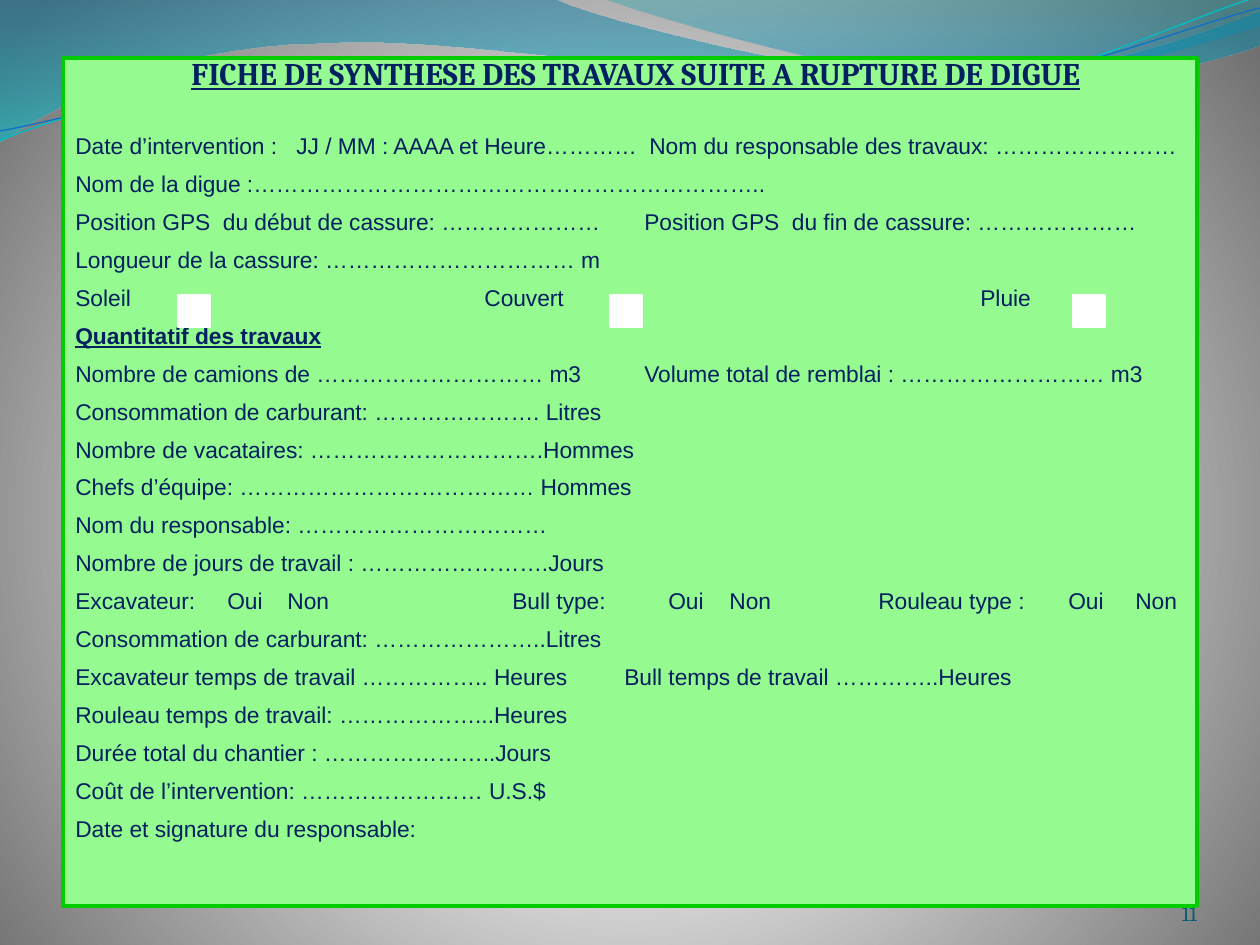
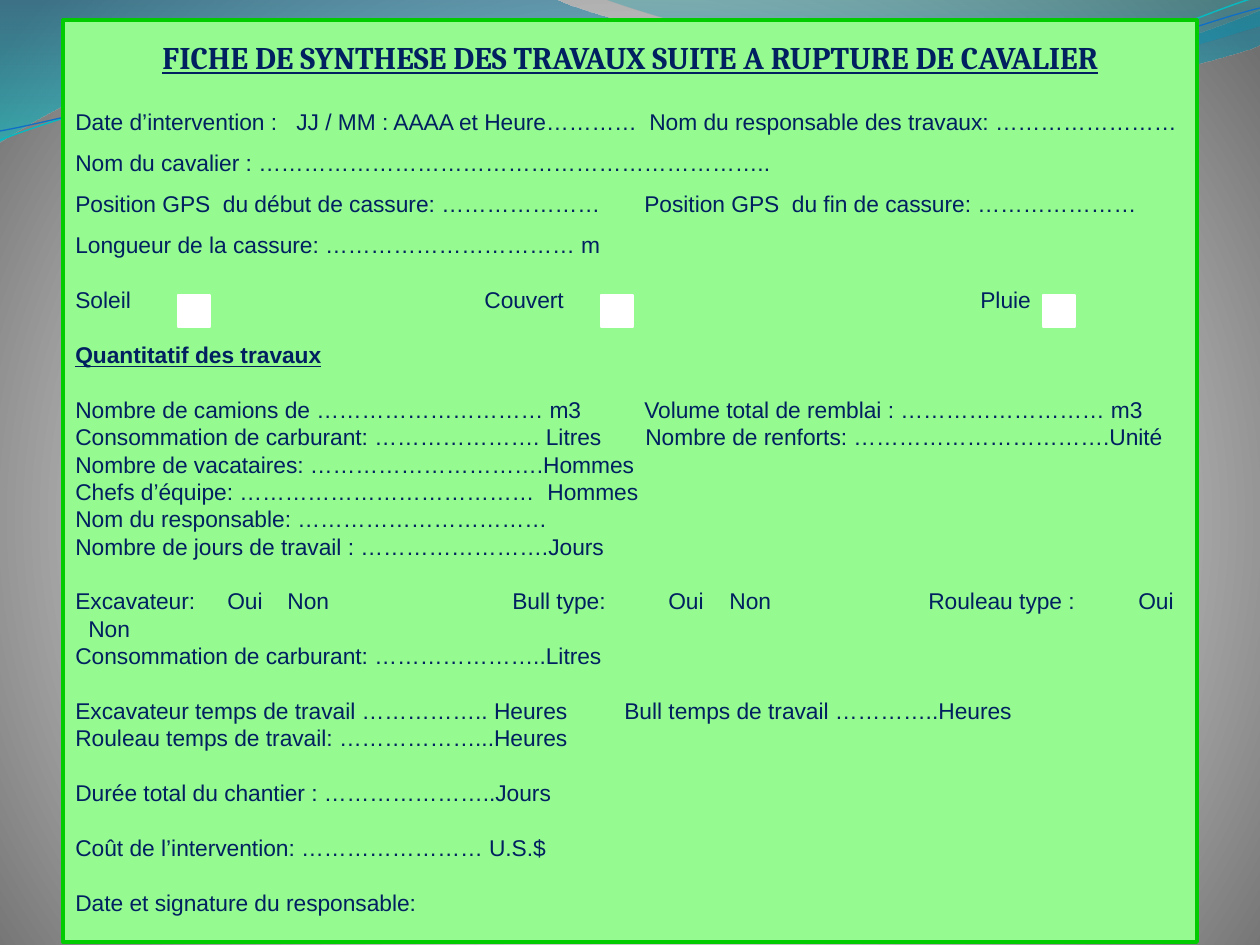
from lxml import etree
from pptx import Presentation
from pptx import util as u
from pptx.dml import color
from pptx.enum import shapes, text
from pptx.oxml import ns

W, H = 1260, 945
LEFT = 75  # where the form text starts
LINE = 15.65  # line pitch of the form, in points
HUES = {
    "navy": "002060", "page": "045D75", "form": "95FA90", "edge": "00CC00",
    "white": "FFFFFF", "grey": "707070", "cyan": "0AB8BF", "blue": "0F6FC6",
    "deep": "0074A1", "aqua": "00C6CF", "teal": "00A1A9", "sky": "008BBF",
}

# Decor: a start point, then lines (2 numbers) and curves (6 numbers)
WAVES = [
    ([(0, 0), (554, -1), (600, 21, 837, 79, 955, 79),
      (1074, 79, 1207, 33, 1260, 11), (1261, 45),
      (1239, 55, 1096, 96, 940, 95), (784, 95, 481, 35, 324, 43),
      (163, 45, 58, 105, -1, 142)],
     [(0, "deep", 45), (100, "aqua", 55)]),
    ([(604, -1), (641, 14, 859, 78, 969, 82),
      (1079, 86, 1211, 40, 1260, 26), (1260, 0)],
     [(0, "teal", 30), (80, "sky", 45)]),
]
CURVES = [
    ([(0, 140), (60, 117, 199, 72, 349, 66), (498, 59, 747, 112, 898, 101),
      (1050, 89, 1182, 19, 1257, -3)], "cyan", 0.85),
    ([(0, 131), (59, 121, 207, 77, 357, 71), (508, 64, 752, 106, 903, 95),
      (1053, 84, 1186, 26, 1260, 8)], "blue", 0.75),
]

# Form rows: key, text, tab stops
ROWS = [
    ("date", "Date d’intervention :\tJJ / MM : AAAA et Heure…………\t"
     "Nom du responsable des travaux: ……………………", (296, 649)),
    ("name", "Nom de la digue :…………………………………………………………..", ()),
    ("gps", "Position GPS  du début de cassure: …………………\t"
     "Position GPS  du fin de cassure: …………………", (644,)),
    ("length", "Longueur de la cassure: …………………………… m", ()),
    ("sky", "Soleil\tCouvert\tPluie", (484, 980)),
    ("head", "Quantitatif des travaux", ()),
    ("trucks", "Nombre de camions de ………………………… m3\t"
     "Volume total de remblai : ……………………… m3", (644,)),
    ("fuel", "Consommation de carburant: …………………. Litres", ()),
    ("crew", "Nombre de vacataires: ………………………….Hommes", ()),
    ("chiefs", "Chefs d’équipe: ………………………………… Hommes", ()),
    ("boss", "Nom du responsable: ……………………………", ()),
    ("days", "Nombre de jours de travail : …………………….Jours", ()),
    ("plant", "Excavateur:\tOui\tNon\tBull type:\tOui\tNon\tRouleau type :\tOui\tNon",
     (227, 287, 512, 668, 729, 878, 1068, 1135)),
    ("diesel", "Consommation de carburant: …………………..Litres", ()),
    ("hours", "Excavateur temps de travail …………….. Heures\t"
     "Bull temps de travail …………..Heures", (624,)),
    ("roller", "Rouleau temps de travail: ………………...Heures", ()),
    ("total", "Durée total du chantier : …………………..Jours", ()),
    ("cost", "Coût de l’intervention: …………………… U.S.$", ()),
    ("sign", "Date et signature du responsable:", ()),
]
# Rows that differ for the second form
RIDGE = {
    "name": ("Nom du cavalier : …………………………………………………………..", ()),
    "fuel": ("Consommation de carburant: …………………. Litres\t"
             "Nombre de renforts: …………………………….Unité", (645,)),
    "chiefs": ("Chefs d’équipe: …………………………………\tHommes", (547,)),
    "plant": ("Excavateur:\tOui\tNon\tBull type:\tOui\tNon\tRouleau type :\tOui\n\tNon",
              (88, 227, 287, 512, 668, 729, 928, 1138)),
}
# Space before each row, in points
EVEN = [0] + [6] * 18
LOOSE = ([0] + [LINE / 2] * 3 + [LINE] * 3 + [0] * 5
         + [LINE, 0, LINE, 0] + [LINE] * 3)


def px(n):
    return round(n * 914400 / 126)


def rgb(name):
    return color.RGBColor.from_string(HUES[name])


def shade(node, stops, tail):
    """Swap the solid fill of a node for a gradient."""
    marks = "".join(
        f'<a:gs pos="{pos * 1000}"><a:srgbClr val="{HUES[hue]}">'
        f'<a:alpha val="{alpha * 1000}"/></a:srgbClr></a:gs>'
        for pos, hue, alpha in stops)
    grad = etree.fromstring(
        f'<a:gradFill {ns.nsdecls("a")} rotWithShape="1">'
        f'<a:gsLst>{marks}</a:gsLst>{tail}</a:gradFill>')
    node.replace(node.find(ns.qn("a:solidFill")), grad)


def outline(slide, route, close):
    """Freeform through the end points, with its curved parts bent."""
    (x, y), *parts = route
    pen = slide.shapes.build_freeform(px(x), px(y))
    pen.add_line_segments([(px(p[-2]), px(p[-1])) for p in parts], close)
    shape = pen.convert_to_shape()
    shape.shadow.inherit = False
    edges = list(shape.element.iter(ns.qn("a:lnTo")))
    for edge, part in zip(edges, parts):
        if len(part) == 6:
            bend = etree.Element(ns.qn("a:cubicBezTo"))
            for a, b in zip(part[::2], part[1::2]):
                etree.SubElement(bend, ns.qn("a:pt"), x=str(px(a) - shape.left),
                                 y=str(px(b) - shape.top))
            edge.getparent().replace(edge, bend)
    return shape


def scene(slide):
    """Background, waves and curved lines."""
    slide.background.fill.solid()
    slide.background.fill.fore_color.rgb = rgb("white")
    back = slide.element.find(".//" + ns.qn("p:bgPr"))
    shade(back, [(0, "white", 100), (25, "white", 100), (100, "grey", 100)],
          '<a:path path="circle"><a:fillToRect l="10000" t="110000" '
          'r="10000" b="100000"/></a:path>')
    for route, stops in WAVES:
        wave = outline(slide, route, True)
        wave.fill.solid()
        wave.line.fill.background()
        shade(wave.element.spPr, stops, '<a:lin ang="5400000" scaled="0"/>')
    for route, hue, width in CURVES:
        curve = outline(slide, route, False)
        curve.fill.background()
        curve.line.color.rgb = rgb(hue)
        curve.line.width = u.Pt(width)


def rect(slide, x, y, w, h, fill, edge, width):
    shape = slide.shapes.add_shape(
        shapes.MSO_SHAPE.RECTANGLE, px(x), px(y), px(w), px(h))
    shape.shadow.inherit = False
    shape.fill.solid()
    shape.fill.fore_color.rgb = rgb(fill)
    shape.line.color.rgb = rgb(edge)
    shape.line.width = u.Pt(width)
    return shape


def write(para, words, size=13, font="Arial", hue="navy", strong=False,
          align="LEFT", gap=0, pitch=None, stops=()):
    """Put formatted text, with its tab stops, into a paragraph."""
    para.alignment = getattr(text.PP_ALIGN, align)
    para.space_before = u.Pt(gap)
    if pitch:
        para.line_spacing = u.Pt(pitch)
    if stops:
        tabs = etree.SubElement(para._p.get_or_add_pPr(), ns.qn("a:tabLst"))
        for x in stops:
            etree.SubElement(tabs, ns.qn("a:tab"), pos=str(px(x - LEFT)), algn="l")
    for i, piece in enumerate(words.split("\n")):
        if i:
            para.add_line_break()
        run = para.add_run()
        run.text = piece
        run.font.size = u.Pt(size)
        run.font.name = font
        run.font.bold = run.font.underline = strong
        run.font.color.rgb = rgb(hue)


def label(slide, x, y, w, h, words, **look):
    frame = slide.shapes.add_textbox(px(x), px(y), px(w), px(h)).text_frame
    frame.word_wrap = True
    write(frame.paragraphs[0], words, font="Cambria", **look)
    return frame


def number(slide, words):
    frame = label(slide, 1092, 876, 105, 50, words, size=12, hue="page", align="RIGHT")
    frame.margin_left = frame.margin_right = 0
    frame.margin_top = frame.margin_bottom = 0
    frame.vertical_anchor = text.MSO_ANCHOR.BOTTOM


def form(slide, top, height, inset, gaps, swaps):
    """Green sheet with one paragraph per row."""
    frame = rect(slide, 63, top, 1134, height, "form", "edge", 2.25).text_frame
    frame.word_wrap = True
    frame.vertical_anchor = text.MSO_ANCHOR.TOP
    frame.margin_top = px(inset)
    for i, (key, words, stops) in enumerate(ROWS):
        words, stops = swaps.get(key, (words, stops))
        para = frame.add_paragraph() if i else frame.paragraphs[0]
        write(para, words, strong=key == "head", gap=gaps[i], pitch=LINE, stops=stops)


def title(slide, x, y, w, words):
    label(slide, x, y, w, 50, words, size=18, strong=True, align="CENTER")


def boxes(slide, spots):
    for x in spots:
        rect(slide, x, 295, 32, 32, "white", "white", 0.75)


def main():
    deck = Presentation()
    deck.slide_width, deck.slide_height = px(W), px(H)
    dike, ridge = (deck.slides.add_slide(deck.slide_layouts[6]) for _ in range(2))

    # Dike form
    scene(dike)
    number(dike, "11")
    form(dike, 58, 848, 74, EVEN, {})
    title(dike, 85, 48, 1102, "FICHE DE SYNTHESE DES TRAVAUX SUITE A RUPTURE DE DIGUE")
    boxes(dike, (178, 610, 1073))

    # Ridge form
    scene(ridge)
    form(ridge, 20, 922, 88, LOOSE, RIDGE)
    title(ridge, 32, 32, 1197, "FICHE DE SYNTHESE DES TRAVAUX SUITE A RUPTURE DE CAVALIER")
    boxes(ridge, (178, 601, 1043))

    deck.save("out.pptx")


if __name__ == "__main__":
    main()
